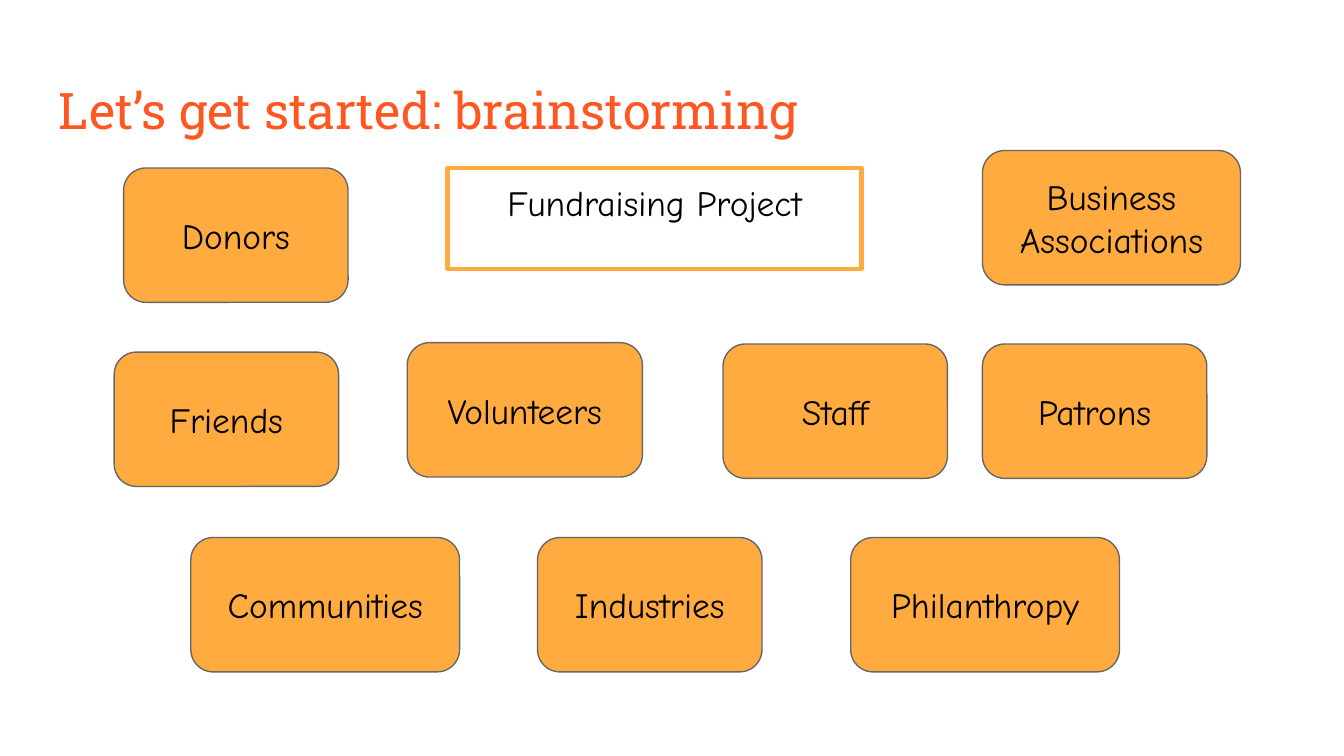
from pptx import Presentation
from pptx.dml.color import RGBColor
from pptx.enum.shapes import MSO_SHAPE
from pptx.enum.text import MSO_ANCHOR, PP_ALIGN
from pptx.util import Inches, Pt

RECT, ROUND = MSO_SHAPE.RECTANGLE, MSO_SHAPE.ROUNDED_RECTANGLE
TOP, MIDDLE = MSO_ANCHOR.TOP, MSO_ANCHOR.MIDDLE
LEFT, CENTER = PP_ALIGN.LEFT, PP_ALIGN.CENTER

RED = RGBColor(0xFF, 0x57, 0x22)
AMBER = RGBColor(0xFF, 0xAB, 0x40)
GRAY = RGBColor(0x66, 0x66, 0x66)
BLACK = RGBColor(0, 0, 0)

WIDE = Inches(10)
HIGH = WIDE * 9 // 16
COL = WIDE / 10    # ten columns
ROW = Inches(1)    # a row is as high as one card
CARD = 1.67        # usual card width in columns

# Each band: top row, then cards as (label, left column, width, drop in rows)
BANDS = [
    (1.12, [("Donors", 0.92, CARD, 0.13),
            ("Business Associations", 7.31, 1.92, 0)]),
    (2.55, [("Friends", 0.85, CARD, 0.07),
            ("Volunteers", 3.03, 1.75, 0),
            ("Staff", 5.38, CARD, 0.01),
            ("Patrons", 7.31, CARD, 0.01)]),
    (4, [("Communities", 1.42, 2, 0),
         ("Industries", 4, CARD, 0),
         ("Philanthropy", 6.33, 2, 0)]),
]


def grid(left, top, width, height):
    """Turn columns and rows into slide lengths."""
    return [round(n) for n in (left * COL, top * ROW, width * COL, height * ROW)]


def write(shape, text, size=19, font="Comic Neue", color=BLACK,
          align=CENTER, anchor=MIDDLE):
    frame = shape.text_frame
    frame.word_wrap = True
    frame.vertical_anchor = anchor
    frame.margin_left = frame.margin_right = Inches(0.1)
    frame.margin_top = frame.margin_bottom = Inches(0.1)
    para = frame.paragraphs[0]
    para.alignment = align
    run = para.add_run()
    run.text = text
    run.font.size = Pt(size)
    run.font.name = font
    run.font.color.rgb = color


def add_box(slide, kind, box, line, weight, fill=None):
    shape = slide.shapes.add_shape(kind, *grid(*box))
    shape.shadow.inherit = False
    if fill is None:
        shape.fill.background()
    else:
        shape.fill.solid()
        shape.fill.fore_color.rgb = fill
    shape.line.color.rgb = line
    shape.line.width = Pt(weight)
    return shape


def add_title(slide, box):
    shape = slide.shapes.add_textbox(*grid(*box))
    write(shape, "Let’s get started: brainstorming", size=27,
          font="Roboto Slab", color=RED, align=LEFT, anchor=TOP)


def add_topic(slide, box):
    shape = add_box(slide, RECT, box, AMBER, 2.25)
    write(shape, "Fundraising Project", anchor=TOP)


def add_band(slide, top, cards):
    """Place one band of cards below the given row."""
    for label, left, width, drop in cards:
        box = (left, top + drop, width, 1)
        write(add_box(slide, ROUND, box, GRAY, 0.75, fill=AMBER), label)


def main():
    deck = Presentation()
    deck.slide_width, deck.slide_height = WIDE, HIGH
    slide = deck.slides.add_slide(deck.slide_layouts[6])
    add_title(slide, (0.34, 0.49, 9.32, 0.63))
    add_topic(slide, (3.33, 1.25, 3.08, 0.75))
    for top, cards in BANDS:
        add_band(slide, top, cards)
    deck.save("out.pptx")


if __name__ == "__main__":
    main()
